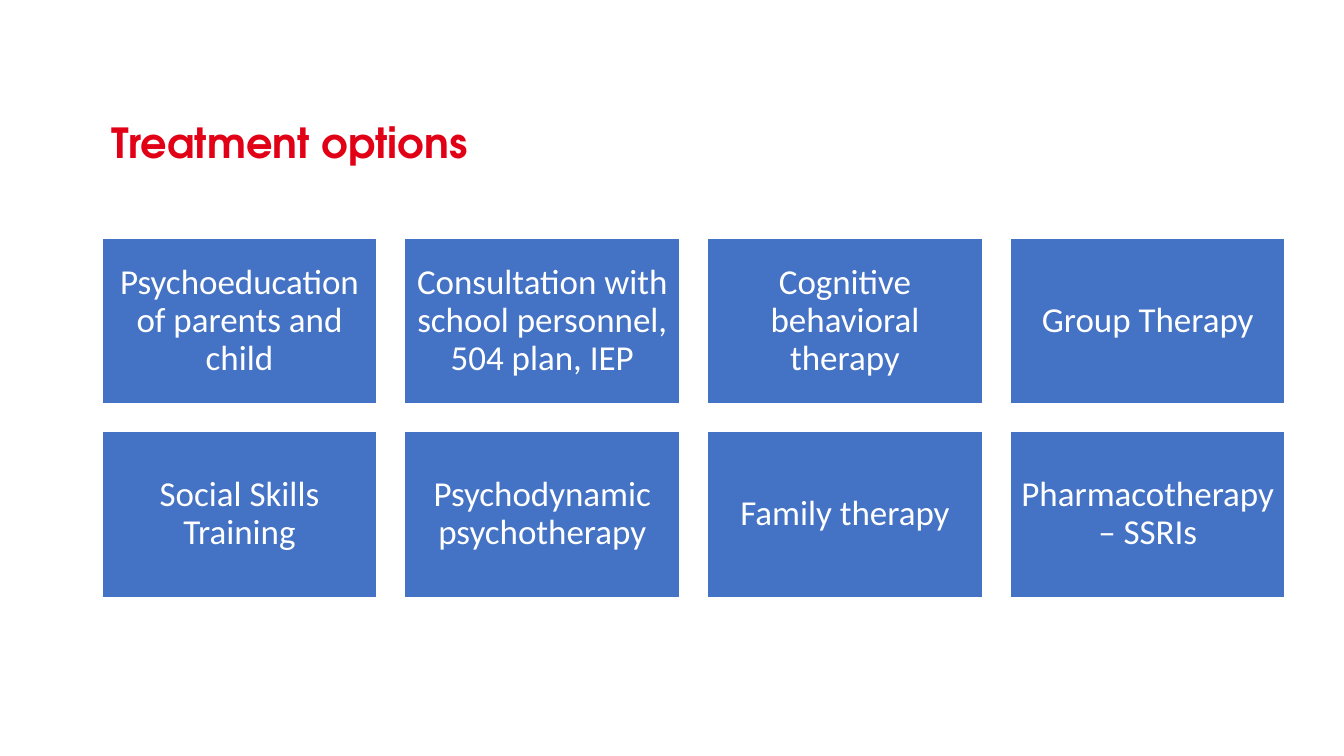
from pptx import Presentation
from pptx.dml.color import RGBColor
from pptx.enum import shapes, text
from pptx.util import Cm, Pt

RED = RGBColor(0xE1, 0x00, 0x16)
BLUE = RGBColor(0x44, 0x72, 0xC4)
WHITE = RGBColor(0xFF, 0xFF, 0xFF)

TREATMENTS = [
    ["Psychoeducation of parents and child",
     "Consultation with school personnel, 504 plan, IEP",
     "Cognitive behavioral therapy",
     "Group Therapy"],
    ["Social Skills Training",
     "Psychodynamic psychotherapy",
     "Family therapy",
     "Pharmacotherapy – SSRIs"],
]
TILE_GAP = Cm(0.7)


def format_paragraph(paragraph, font_name, size, color, line_spacing):
    paragraph.line_spacing = line_spacing
    for run in paragraph.runs:
        run.font.name = font_name
        run.font.size = Pt(size)
        run.font.color.rgb = color


def add_title(slide, title, left, top, width, height):
    text_frame = slide.shapes.add_textbox(left, top, width, height).text_frame
    text_frame.word_wrap = True
    text_frame.text = title
    paragraph = text_frame.paragraphs[0]
    format_paragraph(paragraph, "TeX Gyre Adventor", 29.6, RED, 0.8)
    paragraph.runs[0].font.bold = True


def add_tile(slide, label, left, top, width, height):
    tile = slide.shapes.add_shape(
        shapes.MSO_SHAPE.RECTANGLE, left, top, width, height)
    tile.shadow.inherit = False
    tile.fill.solid()
    tile.fill.fore_color.rgb = BLUE
    tile.line.color.rgb = WHITE
    tile.line.width = Pt(1)

    text_frame = tile.text_frame
    text_frame.word_wrap = True
    text_frame.vertical_anchor = text.MSO_ANCHOR.MIDDLE
    text_frame.margin_left = text_frame.margin_right = Cm(0.25)
    text_frame.margin_top = text_frame.margin_bottom = Cm(0.25)
    text_frame.text = label
    paragraph = text_frame.paragraphs[0]
    paragraph.alignment = text.PP_ALIGN.CENTER
    format_paragraph(paragraph, "Calibri", 25, WHITE, 0.9)


def add_tile_grid(slide, rows, left, top, width, height):
    """Fill the box with equal tiles, TILE_GAP apart."""
    tile_width = (width + TILE_GAP) // len(rows[0]) - TILE_GAP
    tile_height = (height + TILE_GAP) // len(rows) - TILE_GAP
    for row, labels in enumerate(rows):
        for column, label in enumerate(labels):
            add_tile(slide, label,
                     left + column * (tile_width + TILE_GAP),
                     top + row * (tile_height + TILE_GAP),
                     tile_width, tile_height)


def main():
    presentation = Presentation()
    presentation.slide_width = Cm(33.87)
    presentation.slide_height = Cm(19.05)
    slide = presentation.slides.add_slide(presentation.slide_layouts[6])
    add_title(slide, "Treatment options", Cm(2.57), Cm(3.07), Cm(29.82), Cm(1.37))
    add_tile_grid(slide, TREATMENTS, Cm(2.57), Cm(6), Cm(29.82), Cm(9.05))
    presentation.save("out.pptx")


if __name__ == "__main__":
    main()
